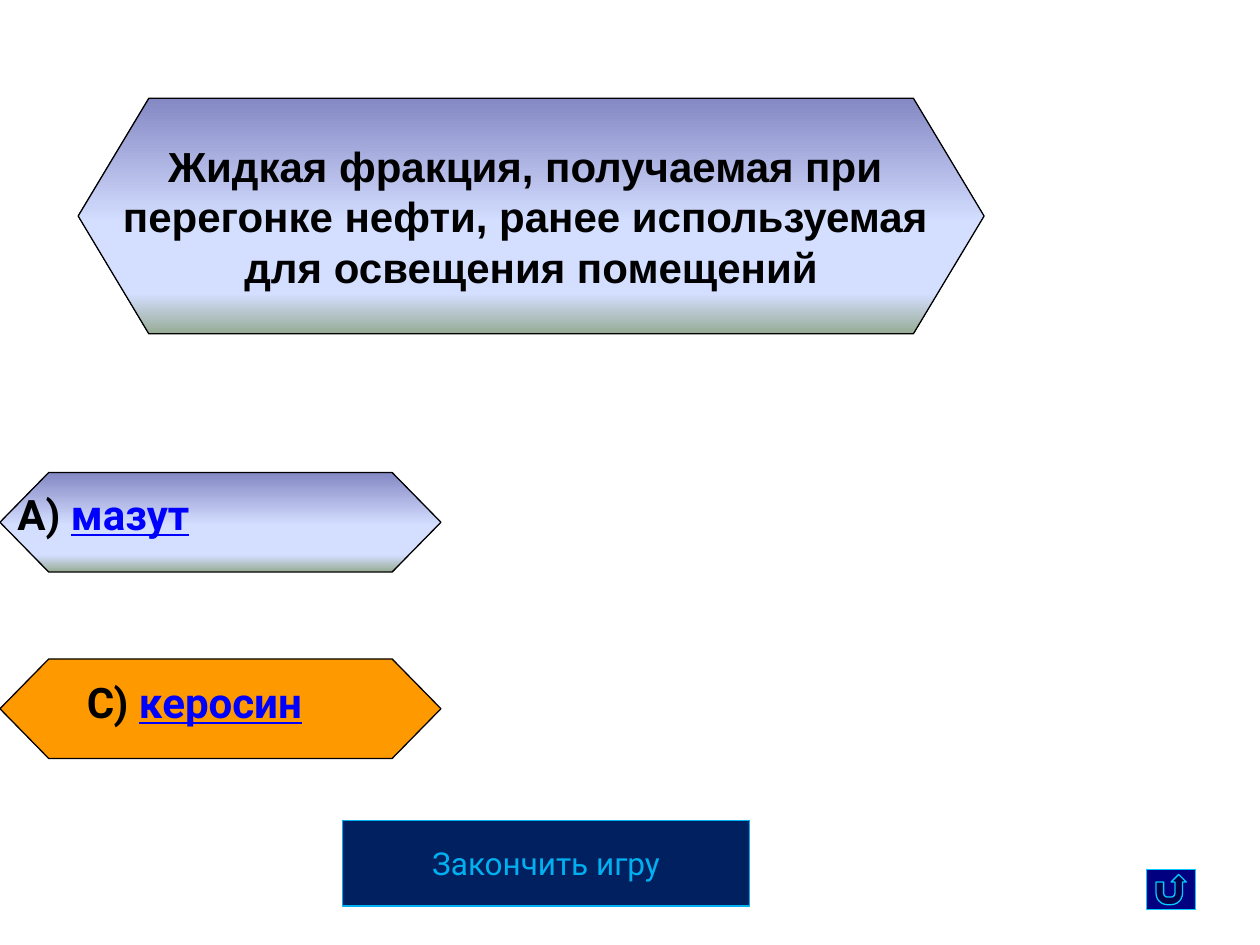
import lxml.etree
import pptx
import pptx.dml.color
import pptx.enum.shapes
import pptx.enum.text
import pptx.oxml
import pptx.oxml.ns
import pptx.util

Inches = pptx.util.Inches
Kind = pptx.enum.shapes.MSO_SHAPE
Align = pptx.enum.text.PP_ALIGN

HUES = {
    "ink": "000000", "link": "0000FF", "gold": "FF9900",
    "navy": "002060", "sky": "00B0F0", "deep": "000080", "cyan": "00CCFF",
}
BLEND = [(0, "8488C4"), (53, "D4DEFF"), (83, "D4DEFF"), (100, "96AB94")]


def tint(name):
    return pptx.dml.color.RGBColor.from_string(HUES[name])


def write(frame, lines, font="Roboto", size=24, bold=True, align=None, wrap=True):
    frame.word_wrap = wrap
    for i, line in enumerate(lines):
        para = frame.paragraphs[0] if i == 0 else frame.add_paragraph()
        para.alignment = align
        for text, hue in line:
            run = para.add_run()
            run.text = text
            run.font.name = font
            run.font.size = pptx.util.Pt(size)
            run.font.bold = bold
            run.font.underline = hue == "link"
            run.font.color.rgb = tint(hue)


class Quiz:
    def __init__(self, slide):
        self.slide = slide
        self.width = pptx.util.Pt(0.75)

    def shape(self, kind, box, fill, edge):
        item = self.slide.shapes.add_shape(kind, *map(Inches, box))
        item.shadow.inherit = False
        item.line.color.rgb = tint(edge)
        item.line.width = self.width
        if fill == "blend":
            self.blend(item)
        else:
            item.fill.solid()
            item.fill.fore_color.rgb = tint(fill)
        return item

    def blend(self, item):
        item.fill.gradient()
        item.fill.gradient_angle = 270
        qn = pptx.oxml.ns.qn
        stops = item.element.spPr.find(qn("a:gradFill")).find(qn("a:gsLst"))
        for old in list(stops):
            stops.remove(old)
        for pos, hue in BLEND:
            stop = lxml.etree.SubElement(stops, qn("a:gs"), pos=str(pos * 1000))
            lxml.etree.SubElement(stop, qn("a:srgbClr"), val=hue)

    def hexa(self, box, fill, slant):
        item = self.shape(Kind.HEXAGON, box, fill, "ink")
        item.adjustments[0] = slant
        return item

    def label(self, box, mark, word):
        frame = self.slide.shapes.add_textbox(*map(Inches, box)).text_frame
        write(frame, [[(mark, "ink"), (word, "link")]])
        frame.auto_size = pptx.enum.text.MSO_AUTO_SIZE.SHAPE_TO_FIT_TEXT

    def center(self, item, lines, hue, **form):
        frame = item.text_frame
        frame.vertical_anchor = pptx.enum.text.MSO_ANCHOR.MIDDLE
        write(frame, [[(line, hue)] for line in lines],
              align=Align.CENTER, wrap=False, **form)


def main():
    deck = pptx.Presentation()
    deck.slide_width, deck.slide_height = Inches(10), Inches(7.5)
    quiz = Quiz(deck.slides.add_slide(deck.slide_layouts[6]))

    for top, fill in [(5.23, "gold"), (3.75, "blend")]:
        quiz.hexa((0, top, 3.5, 0.79), fill, 0.49)
    quiz.label((0.04, 3.83, 4.57, 0.5), "А) ", "мазут")
    quiz.label((0.59, 5.32, 2.99, 0.5), "С) ", "керосин")

    stop = quiz.shape(Kind.ACTION_BUTTON_CUSTOM, (2.72, 6.51, 3.23, 0.68), "navy", "sky")
    quiz.center(stop, ["Закончить игру"], "sky", size=18, bold=False)
    quiz.shape(Kind.ACTION_BUTTON_RETURN, (9.1, 6.9, 0.39, 0.32), "deep", "cyan")

    ask = quiz.hexa((0.62, 0.78, 7.19, 1.87), "blend", 0.3)
    quiz.center(ask, [
        "Жидкая фракция, получаемая при ",
        "перегонке нефти, ранее используемая ",
        "для освещения помещений",
    ], "ink", font="Arial")

    deck.save("out.pptx")


if __name__ == "__main__":
    main()
